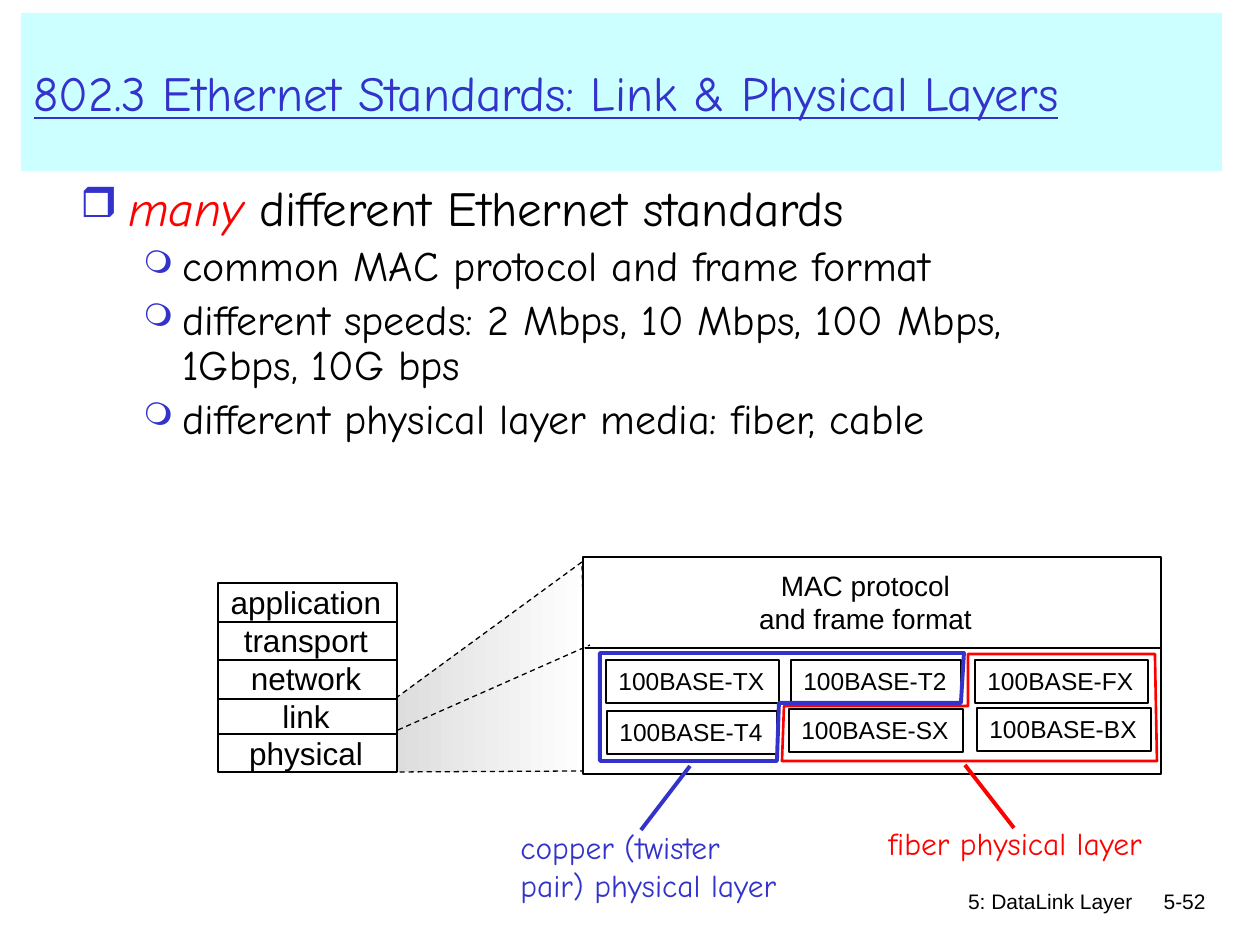
import dataclasses

import pptx
import pptx.dml.color
import pptx.enum.dml
import pptx.enum.shapes
import pptx.enum.text
import pptx.oxml.ns
import pptx.util
from lxml import etree

PX = 7257  # EMU in one px, 126 px to the inch
rgb = pptx.dml.color.RGBColor.from_string
align = pptx.enum.text.PP_ALIGN
DASH = pptx.enum.dml.MSO_LINE.DASH
RECTANGLE = pptx.enum.shapes.MSO_SHAPE.RECTANGLE


@dataclasses.dataclass
class Theme:
    black = rgb("000000")
    white = rgb("FFFFFF")
    blue = rgb("3333CC")
    red = rgb("FF0000")
    banner = rgb("CCFFFF")
    shade = rgb("DDDDDD")
    hand: str = "Comic Neue"
    plain: str = "Arial"
    title: int = 28
    bullet: int = 24
    layer: int = 18
    mac: int = 16
    label: int = 14
    footer: int = 12
    thin: float = 0.75


theme = Theme()
presentation = pptx.Presentation()
presentation.slide_width = pptx.util.Inches(10)
presentation.slide_height = pptx.util.Inches(7.5)
slide = presentation.slides.add_slide(presentation.slide_layouts[5])
shapes = slide.shapes


def add_text(box, lines, size, font=theme.plain, color=theme.black,
             alignment=align.LEFT, wrap=False):
    shape = shapes.add_textbox(*(value * PX for value in box))
    frame = shape.text_frame
    frame.word_wrap = wrap
    for index, line in enumerate(lines):
        paragraph = frame.paragraphs[0] if index == 0 else frame.add_paragraph()
        paragraph.alignment = alignment
        run = paragraph.add_run()
        run.text = line
        run.font.name = font
        run.font.size = pptx.util.Pt(size)
        run.font.color.rgb = color
    return shape


def add_line(x1, y1, x2, y2, color=theme.black, width=theme.thin, dash=None):
    connector = shapes.add_connector(
        pptx.enum.shapes.MSO_CONNECTOR.STRAIGHT, x1 * PX, y1 * PX, x2 * PX, y2 * PX)
    connector.line.color.rgb = color
    connector.line.width = pptx.util.Pt(width)
    connector.line.dash_style = dash
    properties = connector.element.find(pptx.oxml.ns.qn("p:spPr"))
    etree.SubElement(properties, pptx.oxml.ns.qn("a:effectLst"))


# Footer
add_text((746, 882, 399, 63), ["5: DataLink Layer"], theme.footer,
         alignment=align.RIGHT, wrap=True)
add_text((1125, 882, 93, 63), ["5-52"], theme.footer,
         alignment=align.RIGHT, wrap=True)

# Title banner
title = shapes.title
title.left, title.top, title.width, title.height = (
    value * PX for value in (21, 13, 1201, 158))
title.fill.solid()
title.fill.fore_color.rgb = theme.banner
title.text_frame.vertical_anchor = pptx.enum.text.MSO_ANCHOR.MIDDLE
paragraph = title.text_frame.paragraphs[0]
paragraph.alignment = align.LEFT
run = paragraph.add_run()
run.text = "802.3 Ethernet Standards: Link & Physical Layers"
run.font.name = theme.hand
run.font.size = pptx.util.Pt(theme.title)
run.font.color.rgb = theme.blue
run.font.underline = True

# Bulleted list: level, then runs with colour and italic
bullets = [
    (0, [("many", theme.red, True),
         (" different Ethernet standards", theme.black, False)]),
    (1, [("common MAC protocol and frame format", theme.black, False)]),
    (1, [("different speeds: 2 Mbps, 10 Mbps, 100 Mbps, 1Gbps, 10G bps",
          theme.black, False)]),
    (1, [("different physical layer media: fiber, cable", theme.black, False)]),
]
# Per level: margin px, hanging px, size, symbol, symbol size in percent
levels = [(48, 48, theme.title, "❒", 85), (102, 39, theme.bullet, "❍", 75)]
body = shapes.add_textbox(*(value * PX for value in (68, 178, 1071, 290)))
body.text_frame.word_wrap = True
for index, (level, runs) in enumerate(bullets):
    margin, hanging, size, symbol, percent = levels[level]
    paragraph = (body.text_frame.paragraphs[0] if index == 0
                 else body.text_frame.add_paragraph())
    paragraph.level = level
    paragraph.line_spacing = 0.9
    paragraph.space_before = pptx.util.Pt(size * 0.2)
    for text, color, italic in runs:
        run = paragraph.add_run()
        run.text = text
        run.font.name = theme.hand
        run.font.size = pptx.util.Pt(size)
        run.font.color.rgb = color
        run.font.italic = italic
    properties = paragraph._p.get_or_add_pPr()
    properties.set("marL", str(margin * PX))
    properties.set("indent", str(-hanging * PX))
    bullet_color = etree.SubElement(properties, pptx.oxml.ns.qn("a:buClr"))
    etree.SubElement(bullet_color, pptx.oxml.ns.qn("a:srgbClr"), val=str(theme.blue))
    etree.SubElement(properties, pptx.oxml.ns.qn("a:buSzPct"), val=str(percent * 1000))
    etree.SubElement(properties, pptx.oxml.ns.qn("a:buChar"), char=symbol)

# Shaded zoom from the lower layers to the detail box
builder = shapes.build_freeform(582, 562, scale=PX)
builder.add_line_segments([(396, 698), (397, 772), (588, 771)], close=True)
zoom = builder.convert_to_shape()
zoom.shadow.inherit = False
zoom.fill.gradient()
zoom.fill.gradient_angle = 0
for stop, color, position in zip(
        zoom.fill.gradient_stops, (theme.shade, theme.white), (0, 1)):
    stop.color.rgb = color
    stop.position = position
zoom.line.color.rgb = theme.black
zoom.line.width = pptx.util.Pt(theme.thin)
zoom.line.dash_style = DASH

# Frames of the protocol stack and of the detail box
for box in [(218, 583, 179, 189), (583, 557, 578, 217)]:
    frame = shapes.add_shape(RECTANGLE, *(value * PX for value in box))
    frame.shadow.inherit = False
    frame.fill.solid()
    frame.fill.fore_color.rgb = theme.white
    frame.line.color.rgb = theme.black
    frame.line.width = pptx.util.Pt(theme.thin)

# Protocol stack
add_text((218, 577, 176, 202),
         ["application", "transport", "network", "link", "physical"],
         theme.layer, alignment=align.CENTER)
for y in (622, 660, 699, 734):
    add_line(218, y, 397, y)
for x in (218, 397):
    add_line(x, 743, x, 768, dash=DASH)

# Link layer detail
add_line(585, 648, 1160, 648)
add_text((746, 562, 239, 81), ["MAC protocol", "and frame format"],
         theme.mac, alignment=align.CENTER)
add_line(398, 730, 590, 645, dash=DASH)

# Physical layer standards
for left, top, width, name in [
        (606, 660, 173, "TX"), (791, 660, 170, "T2"), (975, 660, 173, "FX"),
        (607, 711, 170, "T4"), (789, 709, 174, "SX"), (977, 708, 174, "BX")]:
    label = add_text((left, top, width, 43), ["100BASE-" + name], theme.label)
    label.line.color.rgb = theme.black
    label.line.width = pptx.util.Pt(theme.thin)

# Media groups: outline, pointer and caption
media = [
    (theme.red, 1.5,
     [(968, 654), (968, 706), (784, 706), (782, 761), (1157, 761), (1155, 654)],
     (965, 765, 1014, 828), (876, 818, 310, 50), ["fiber physical layer"]),
    (theme.blue, 2.25,
     [(964, 653), (961, 703), (779, 703), (777, 761), (600, 761), (600, 653)],
     (690, 766, 641, 830), (508, 822, 302, 88),
     ["copper (twister", "pair) physical layer"]),
]
for color, width, points, pointer, caption_box, caption in media:
    builder = shapes.build_freeform(*points[0], scale=PX)
    builder.add_line_segments(points[1:], close=True)
    outline = builder.convert_to_shape()
    outline.shadow.inherit = False
    outline.fill.background()
    outline.line.color.rgb = color
    outline.line.width = pptx.util.Pt(width)
    add_line(*pointer, color=color, width=2.25)
    add_text(caption_box, caption, theme.layer, theme.hand, color)

presentation.save("out.pptx")
